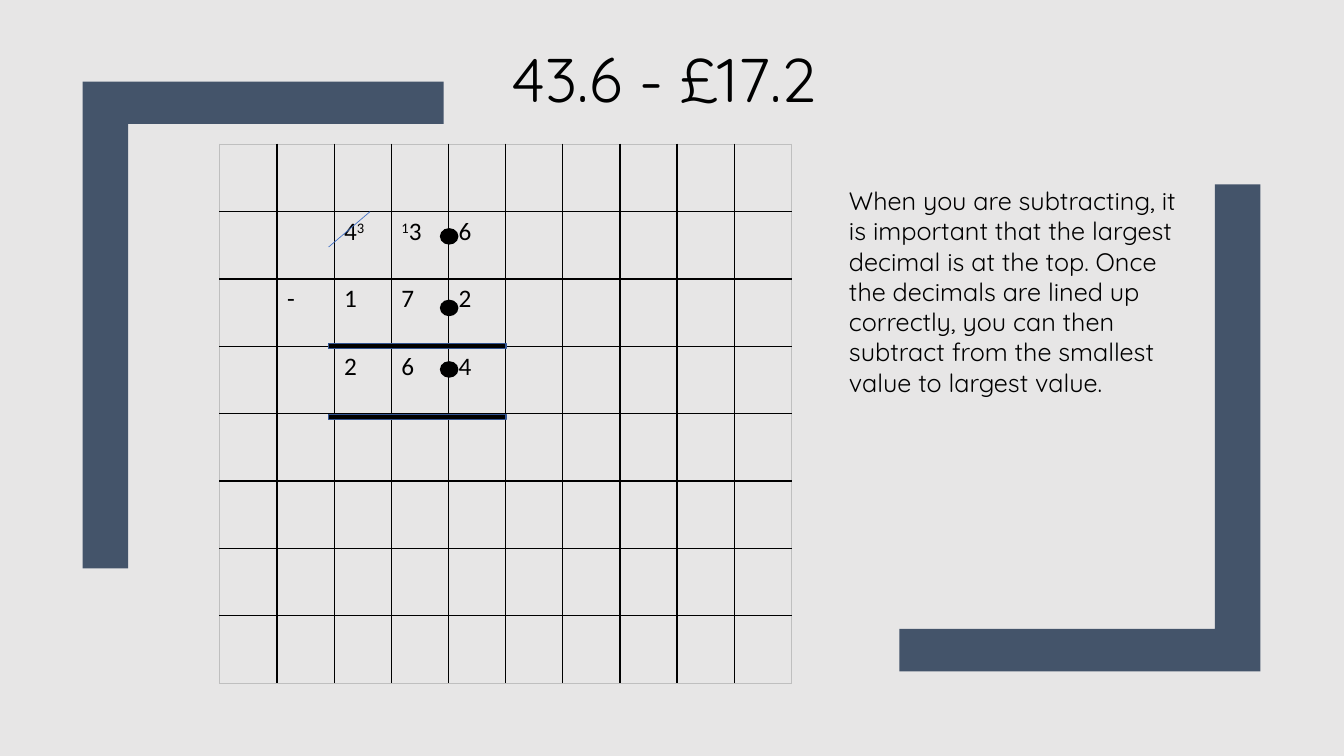
from lxml.etree import SubElement
from pptx import Presentation
from pptx.dml.color import RGBColor
from pptx.enum.shapes import MSO_CONNECTOR, MSO_SHAPE
from pptx.enum.text import MSO_ANCHOR, MSO_AUTO_SIZE, PP_ALIGN
from pptx.oxml import parse_xml
from pptx.oxml.ns import nsdecls, qn
from pptx.util import Inches, Pt

COLOURS = {"background": "E7E6E6", "bracket": "44546A", "ink": "000000",
           "edge": "BFBFBF", "bar_line": "325491", "strike": "4472C4"}

TITLE = "43.6 - £17.2 "
ADVICE = ("When you are subtracting, it is important that the largest decimal is "
          "at the top. Once the decimals are lined up correctly, you can then "
          "subtract from the smallest value to largest value.")
# (row, column): runs of (text, is raised)
DIGITS = {
    (1, 2): [("4", False), ("3", True)],
    (1, 3): [("1", True), ("3", False)],
    (1, 4): [("6", False)],
    (2, 1): [("-", False)],
    (2, 2): [("1", False)],
    (2, 3): [("7", False)],
    (2, 4): [("2", False)],
    (3, 2): [("2", False)],
    (3, 3): [("6", False)],
    (3, 4): [("4", False)],
}
ROWS, COLUMNS = 8, 10
GRID = (2.18, 1.43, 5.67, 5.35)
POINT_TOPS = [2.27, 2.98, 3.59]
BAR_TOPS = [3.41, 4.11]
STRIKE = (3.26, 2.45, 3.67, 2.1)
BRACKET = [(1.27, 5.64), (0.82, 5.64), (0.82, 0.81),
           (4.4, 0.81), (4.4, 1.23), (1.27, 1.23)]
MIRROR = (13.32, 7.47)


def colour(name):
    return RGBColor.from_string(COLOURS[name])


def paint(shape, fill, line=None):
    shape.shadow.inherit = False
    shape.fill.solid()
    shape.fill.fore_color.rgb = colour(fill)
    if line:
        shape.line.color.rgb = colour(line)
        shape.line.width = Pt(1)
    else:
        shape.line.fill.background()


def add_bracket(page, points):
    corners = [(Inches(x), Inches(y)) for x, y in points]
    builder = page.shapes.build_freeform(*corners[0], scale=1.0)
    builder.add_line_segments(corners[1:], close=True)
    paint(builder.convert_to_shape(), "bracket")


def fill_placeholder(box, place, text, size, anchor, align):
    box.left, box.top, box.width, box.height = map(Inches, place)
    frame = box.text_frame
    frame.text = text
    frame.word_wrap = True
    frame.auto_size = MSO_AUTO_SIZE.NONE
    frame.vertical_anchor = anchor
    para = frame.paragraphs[0]
    para.alignment = align
    para.space_before = Pt(0)
    para.font.name = "Quicksand"
    para.font.size = Pt(size)
    para.font.color.rgb = colour("ink")
    return para


def set_borders(cell, row, column):
    """Draw black inner grid lines and a pale outer edge."""
    outer = {"lnL": column == 0, "lnR": column == COLUMNS - 1,
             "lnT": row == 0, "lnB": row == ROWS - 1}
    properties = cell._tc.get_or_add_tcPr()
    for position, (side, is_outer) in enumerate(outer.items()):
        shade = COLOURS["edge" if is_outer else "ink"]
        properties.insert(position, parse_xml(
            f'<a:{side} {nsdecls("a")} w="12700"><a:solidFill>'
            f'<a:srgbClr val="{shade}"/></a:solidFill></a:{side}>'))


def add_grid(page):
    table = page.shapes.add_table(ROWS, COLUMNS, *map(Inches, GRID)).table
    table.first_row = table.horz_banding = False
    for row in range(ROWS):
        for column in range(COLUMNS):
            cell = table.cell(row, column)
            cell.fill.background()
            set_borders(cell, row, column)
            para = cell.text_frame.paragraphs[0]
            para.font.name = "Calibri"
            para.font.size = Pt(18)
            para.font.color.rgb = colour("ink")
            for text, is_raised in DIGITS.get((row, column), []):
                span = para.add_run()
                span.text = text
                if is_raised:
                    span._r.get_or_add_rPr().set("baseline", "30000")


def add_mark(page, kind, place, line):
    paint(page.shapes.add_shape(kind, *map(Inches, place)), "ink", line)


def main():
    deck = Presentation()
    deck.slide_width, deck.slide_height = Inches(13.33), Inches(7.5)
    page = deck.slides.add_slide(deck.slide_layouts[1])
    page.background.fill.solid()
    page.background.fill.fore_color.rgb = colour("background")

    fill_placeholder(page.shapes.title, (1.67, 0.36, 10, 0.84), TITLE, 44,
                     MSO_ANCHOR.TOP, PP_ALIGN.CENTER)
    advice = fill_placeholder(page.placeholders[1], (8.32, 1.79, 3.62, 2.22), ADVICE,
                              18, MSO_ANCHOR.TOP, PP_ALIGN.LEFT)
    layout = advice._p.get_or_add_pPr()
    layout.set("marL", "0")
    layout.set("indent", "0")
    layout.insert_element_before(parse_xml(f'<a:buNone {nsdecls("a")}/>'),
                                 "a:tabLst", "a:defRPr", "a:extLst")

    add_bracket(page, [(MIRROR[0] - x, MIRROR[1] - y) for x, y in BRACKET])
    add_bracket(page, BRACKET)
    add_grid(page)
    for top in POINT_TOPS:
        add_mark(page, MSO_SHAPE.OVAL, (4.37, top, 0.17, 0.15), "ink")
    for top in BAR_TOPS:
        add_mark(page, MSO_SHAPE.RECTANGLE, (3.26, top, 1.76, 0.05), "bar_line")

    strike = page.shapes.add_connector(MSO_CONNECTOR.STRAIGHT, *map(Inches, STRIKE))
    strike.line.color.rgb = colour("strike")
    strike.line.width = Pt(0.5)
    SubElement(strike._element.spPr, qn("a:effectLst"))

    deck.save("out.pptx")


if __name__ == "__main__":
    main()
